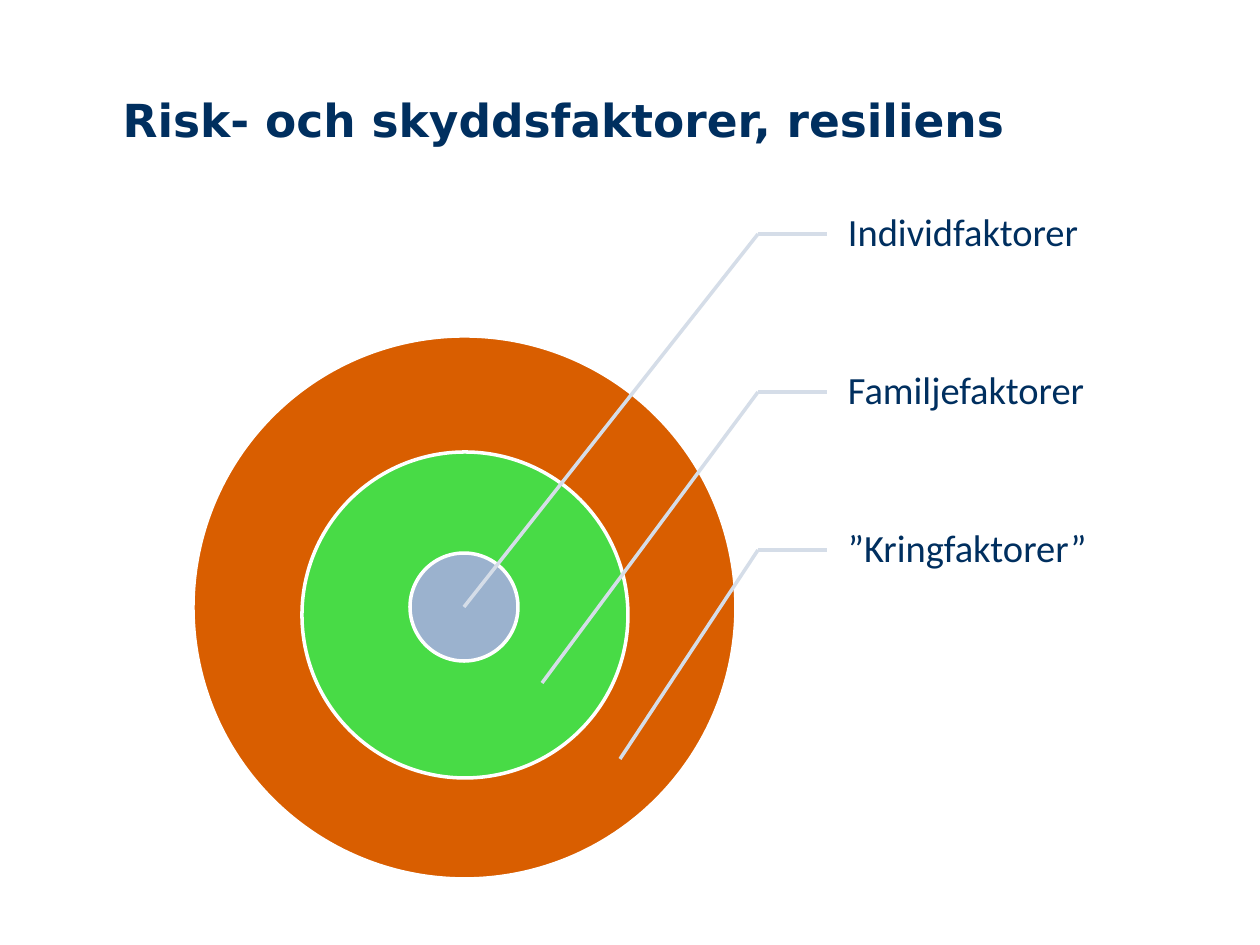
from dataclasses import dataclass

from pptx import Presentation
from pptx.dml.color import RGBColor
from pptx.enum.shapes import MSO_CONNECTOR as Connector, MSO_SHAPE as Shape
from pptx.enum.text import MSO_ANCHOR as Anchor, PP_ALIGN as Align
from pptx.oxml.ns import qn
from pptx.util import Emu, Pt

COLORS = {
    "text": "002F5F",
    "outline": "FFFFFF",
    "leader": "D5DDE8",
    "surroundings": "D95E00",
    "family": "48DB46",
    "individual": "9BB2CE",
}
PX_PER_INCH = 126
LINE_WIDTH = Pt(2)

LABEL_LEFT, LABEL_TOP = 827, 155
LABEL_WIDTH, LABEL_HEIGHT = 272, 158
LEADER_BEND = 758
TARGET_X, TARGET_Y = 464, 607
TARGET_STEP_X, TARGET_STEP_Y = 78, 76


@dataclass
class Ring:
    left: int
    top: int
    diameter: int
    color: str


@dataclass
class Label:
    text: str
    row: int


RINGS = [
    Ring(193, 336, 543, "surroundings"),
    Ring(302, 452, 326, "family"),
    Ring(410, 553, 108, "individual"),
]
LABELS = [
    Label(text, row)
    for row, text in enumerate(["Individfaktorer", "Familjefaktorer", "”Kringfaktorer”"])
]


def px(length: int) -> Emu:
    return Emu(round(length * 914400 / PX_PER_INCH))


def rgb(name: str) -> RGBColor:
    return RGBColor.from_string(COLORS[name])


def format_text(shape, text: str, frame_format: dict, font_format: dict):
    """Write one left-aligned paragraph and return it."""
    frame = shape.text_frame
    frame.text = text
    for key, value in frame_format.items():
        setattr(frame, key, value)
    paragraph = frame.paragraphs[0]
    paragraph.alignment = Align.LEFT
    for key, value in font_format.items():
        setattr(paragraph.font, key, value)
    paragraph.font.color.rgb = rgb("text")
    return paragraph


def draw_ring(slide, ring: Ring) -> None:
    circle = slide.shapes.add_shape(
        Shape.OVAL, px(ring.left), px(ring.top), px(ring.diameter), px(ring.diameter)
    )
    circle.shadow.inherit = False
    circle.fill.solid()
    circle.fill.fore_color.rgb = rgb(ring.color)
    circle.line.color.rgb = rgb("outline")
    circle.line.width = LINE_WIDTH


def draw_leader(slide, start: tuple[int, int], end: tuple[int, int]) -> None:
    leader = slide.shapes.add_connector(
        Connector.STRAIGHT, *(px(value) for value in (*start, *end))
    )
    leader.line.color.rgb = rgb("leader")
    leader.line.width = LINE_WIDTH
    properties = leader._element.spPr
    properties.append(properties.makeelement(qn("a:effectLst"), {}))


def draw_label(slide, label: Label) -> None:
    top = LABEL_TOP + label.row * LABEL_HEIGHT
    box = slide.shapes.add_textbox(
        px(LABEL_LEFT), px(top), px(LABEL_WIDTH), px(LABEL_HEIGHT)
    )
    frame_format = {
        "word_wrap": True, "vertical_anchor": Anchor.MIDDLE, "margin_left": px(21),
        "margin_top": px(4), "margin_right": px(4), "margin_bottom": px(4),
    }
    paragraph = format_text(
        box, label.text, frame_format, {"name": "Calibri", "size": Pt(22)}
    )
    paragraph.line_spacing = 0.9

    # Horizontal stub, then the diagonal into the ring
    middle = top + LABEL_HEIGHT // 2
    bend = (LEADER_BEND, middle)
    target = (TARGET_X + label.row * TARGET_STEP_X, TARGET_Y + label.row * TARGET_STEP_Y)
    draw_leader(slide, bend, (LABEL_LEFT, middle))
    draw_leader(slide, bend, target)


def main() -> None:
    deck = Presentation()
    deck.slide_width, deck.slide_height = px(1260), px(945)
    slide = deck.slides.add_slide(deck.slide_layouts[5])

    # Title
    title = slide.shapes.title
    title.left, title.top, title.width, title.height = px(110), px(86), px(944), px(110)
    format_text(
        title,
        "Risk- och skyddsfaktorer, resiliens",
        {"word_wrap": True, "vertical_anchor": Anchor.TOP},
        {"name": "DejaVu Sans", "size": Pt(26), "bold": True},
    )

    # Nested rings, outermost first
    for ring in RINGS:
        draw_ring(slide, ring)

    # Labels with their leader lines
    for label in LABELS:
        draw_label(slide, label)

    deck.save("out.pptx")


if __name__ == "__main__":
    main()
